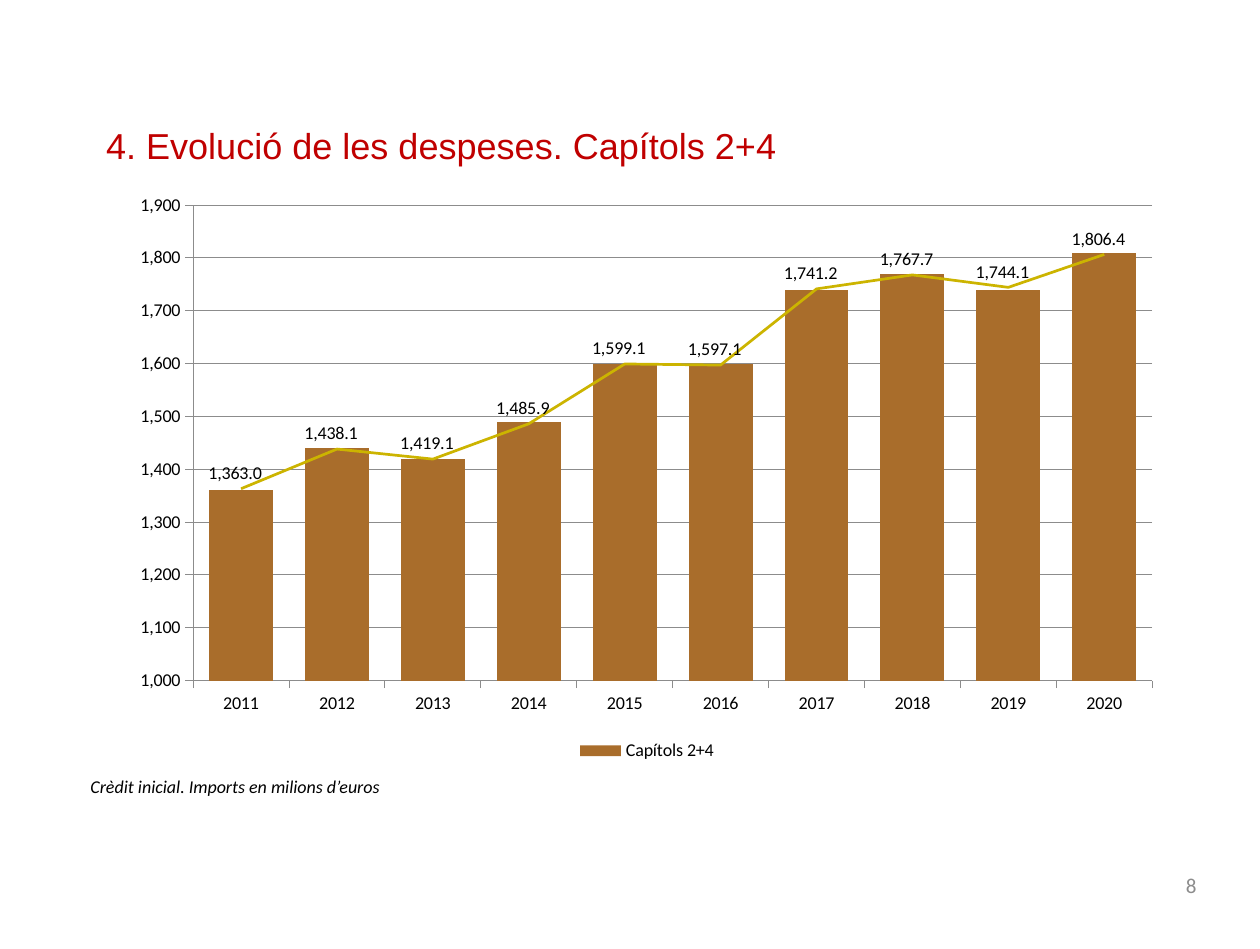
from dataclasses import dataclass

from pptx import Presentation
from pptx.chart.data import CategoryChartData
from pptx.dml.color import RGBColor
from pptx.enum.chart import XL_CHART_TYPE, XL_LABEL_POSITION, XL_LEGEND_POSITION, XL_MARKER_STYLE, XL_TICK_MARK
from pptx.enum.text import MSO_ANCHOR, MSO_AUTO_SIZE, PP_ALIGN
from pptx.oxml import parse_xml
from pptx.oxml.ns import nsdecls
from pptx.util import Emu, Pt

COLUMNS = XL_CHART_TYPE.COLUMN_CLUSTERED
LABEL_ABOVE = XL_LABEL_POSITION.ABOVE
LEGEND_BOTTOM = XL_LEGEND_POSITION.BOTTOM
NO_MARKER = XL_MARKER_STYLE.NONE
TICK_OUTSIDE = XL_TICK_MARK.OUTSIDE
TOP, MIDDLE = MSO_ANCHOR.TOP, MSO_ANCHOR.MIDDLE
GROW = MSO_AUTO_SIZE.SHAPE_TO_FIT_TEXT
LEFT, RIGHT = PP_ALIGN.LEFT, PP_ALIGN.RIGHT

EMU_PER_PX = 9144
SLIDE_SIZE = (972, 732)
TITLE_BOX = (72, 90, 765, 43)
CHART_BOX = (92, 142, 814, 449)
PLOT_BOX = (57, 16, 740, 367)
NOTE_BOX = (60, 593, 246, 27)
NUMBER_BOX = (706, 663, 227, 39)

YEARS = [str(year) for year in range(2011, 2021)]
EXPENSES = [1363, 1438.1, 1419.1, 1485.9, 1599.1, 1597.1, 1741.2, 1767.7, 1744.1, 1806.4]
ROUNDED_EXPENSES = [round(expense, -1) for expense in EXPENSES]
EURO_FORMAT = r"_-* #,##0.0\ _€_-;\-* #,##0.0\ _€_-;_-* "


@dataclass(frozen=True)
class Theme:
    title: RGBColor = RGBColor(0xC0, 0x00, 0x00)
    text: RGBColor = RGBColor(0x00, 0x00, 0x00)
    muted: RGBColor = RGBColor(0x8C, 0x8C, 0x8C)
    column: RGBColor = RGBColor(0xA9, 0x6D, 0x2B)
    trend: RGBColor = RGBColor(0xCC, 0xB4, 0x00)
    heading_font: str = "Arial"
    body_font: str = "Calibri"
    title_size: Pt = Pt(20)
    body_size: Pt = Pt(10)
    number_size: Pt = Pt(11.7)
    trend_width: Pt = Pt(1.5)
    axis_width: Pt = Pt(0.5)


THEME = Theme()


def to_emu(lengths):
    return [Emu(length * EMU_PER_PX) for length in lengths]


def set_attributes(target, values):
    for name, value in values.items():
        setattr(target, name, value)


def set_font(font, color, values):
    set_attributes(font, values)
    font.color.rgb = color


def add_text(slide, box, text, color, font, frame, align=LEFT):
    text_frame = slide.shapes.add_textbox(*to_emu(box)).text_frame
    set_attributes(text_frame, frame)
    paragraph = text_frame.paragraphs[0]
    paragraph.alignment = align
    run = paragraph.add_run()
    run.text = text
    set_font(run.font, color, font)


def move_second_series_to_line(chart):
    bar_chart = chart.element.xpath(".//c:barChart")[0]
    series = bar_chart.xpath("./c:ser")[1]
    for invert in series.xpath("./c:invertIfNegative"):
        series.remove(invert)
    line_chart = parse_xml(
        f'<c:lineChart {nsdecls("c")}><c:grouping val="standard"/>'
        '<c:varyColors val="0"/><c:marker val="1"/></c:lineChart>'
    )
    line_chart.insert(2, series)
    for axis_id in bar_chart.xpath("./c:axId"):
        line_chart.append(parse_xml(f'<c:axId {nsdecls("c")} val="{axis_id.get("val")}"/>'))
    bar_chart.addnext(line_chart)


def place_plot(chart, box, plot_box):
    plot_area = chart.element.xpath(".//c:plotArea")[0]
    for layout in plot_area.xpath("./c:layout"):
        plot_area.remove(layout)
    sizes = (box[2], box[3]) * 2
    fractions = [round(length / size, 3) for length, size in zip(plot_box, sizes)]
    modes = "".join(f'<c:{name}Mode val="edge"/>' for name in "xy")
    places = "".join(f'<c:{name} val="{value}"/>' for name, value in zip("xywh", fractions))
    plot_area.insert(0, parse_xml(
        f'<c:layout {nsdecls("c")}><c:manualLayout><c:layoutTarget val="inner"/>'
        f"{modes}{places}</c:manualLayout></c:layout>"
    ))


def style_axes(chart):
    set_attributes(chart.value_axis, {
        "minimum_scale": 1000, "maximum_scale": 1900, "major_unit": 100,
        "has_major_gridlines": True,
    })
    set_attributes(chart.value_axis.tick_labels, {
        "number_format": "#,##0", "number_format_is_linked": False,
    })
    for axis in (chart.category_axis, chart.value_axis):
        axis.major_tick_mark = TICK_OUTSIDE
    for part in (chart.category_axis, chart.value_axis, chart.value_axis.major_gridlines):
        part.format.line.color.rgb = THEME.muted
        part.format.line.width = THEME.axis_width


def style_series(chart):
    column_plot, line_plot = chart.plots
    set_attributes(column_plot, {"gap_width": 50, "vary_by_categories": False})
    fill = column_plot.series[0].format.fill
    fill.solid()
    fill.fore_color.rgb = THEME.column
    trend = line_plot.series[0]
    trend.smooth = False
    trend.marker.style = NO_MARKER
    trend.format.line.color.rgb = THEME.trend
    trend.format.line.width = THEME.trend_width
    set_attributes(trend.data_labels, {
        "show_value": True, "position": LABEL_ABOVE,
        "number_format": EURO_FORMAT, "number_format_is_linked": False,
    })


def style_legend(chart):
    chart.has_legend = True
    set_attributes(chart.legend, {"position": LEGEND_BOTTOM, "include_in_layout": False})
    position = chart.element.xpath(".//c:legend/c:legendPos")[0]
    position.addnext(parse_xml(
        f'<c:legendEntry {nsdecls("c")}><c:idx val="1"/><c:delete val="1"/></c:legendEntry>'
    ))


def add_expense_chart(slide, box):
    data = CategoryChartData()
    data.categories = YEARS
    data.add_series("Capítols 2+4", ROUNDED_EXPENSES)
    data.add_series("Series 2", EXPENSES)
    chart = slide.shapes.add_chart(COLUMNS, *to_emu(box), data).chart
    chart.has_title = False
    set_font(chart.font, THEME.text, {"name": THEME.body_font, "size": THEME.body_size})
    move_second_series_to_line(chart)
    place_plot(chart, box, PLOT_BOX)
    style_axes(chart)
    style_series(chart)
    style_legend(chart)


def add_expense_slide(presentation):
    slide = presentation.slides.add_slide(presentation.slide_layouts[6])
    add_text(slide, NUMBER_BOX, "8", THEME.muted,
             {"name": THEME.body_font, "size": THEME.number_size},
             {"word_wrap": True, "vertical_anchor": MIDDLE}, RIGHT)
    add_text(slide, TITLE_BOX, "4. Evolució de les despeses. Capítols 2+4", THEME.title,
             {"name": THEME.heading_font, "size": THEME.title_size},
             {"word_wrap": True, "vertical_anchor": TOP, "auto_size": GROW})
    add_text(slide, NOTE_BOX, "Crèdit inicial. Imports en milions d’euros", THEME.text,
             {"name": THEME.body_font, "size": THEME.body_size, "italic": True},
             {"word_wrap": False, "vertical_anchor": TOP, "auto_size": GROW})
    add_expense_chart(slide, CHART_BOX)


def main():
    presentation = Presentation()
    presentation.slide_width, presentation.slide_height = to_emu(SLIDE_SIZE)
    add_expense_slide(presentation)
    presentation.save("out.pptx")


if __name__ == "__main__":
    main()
